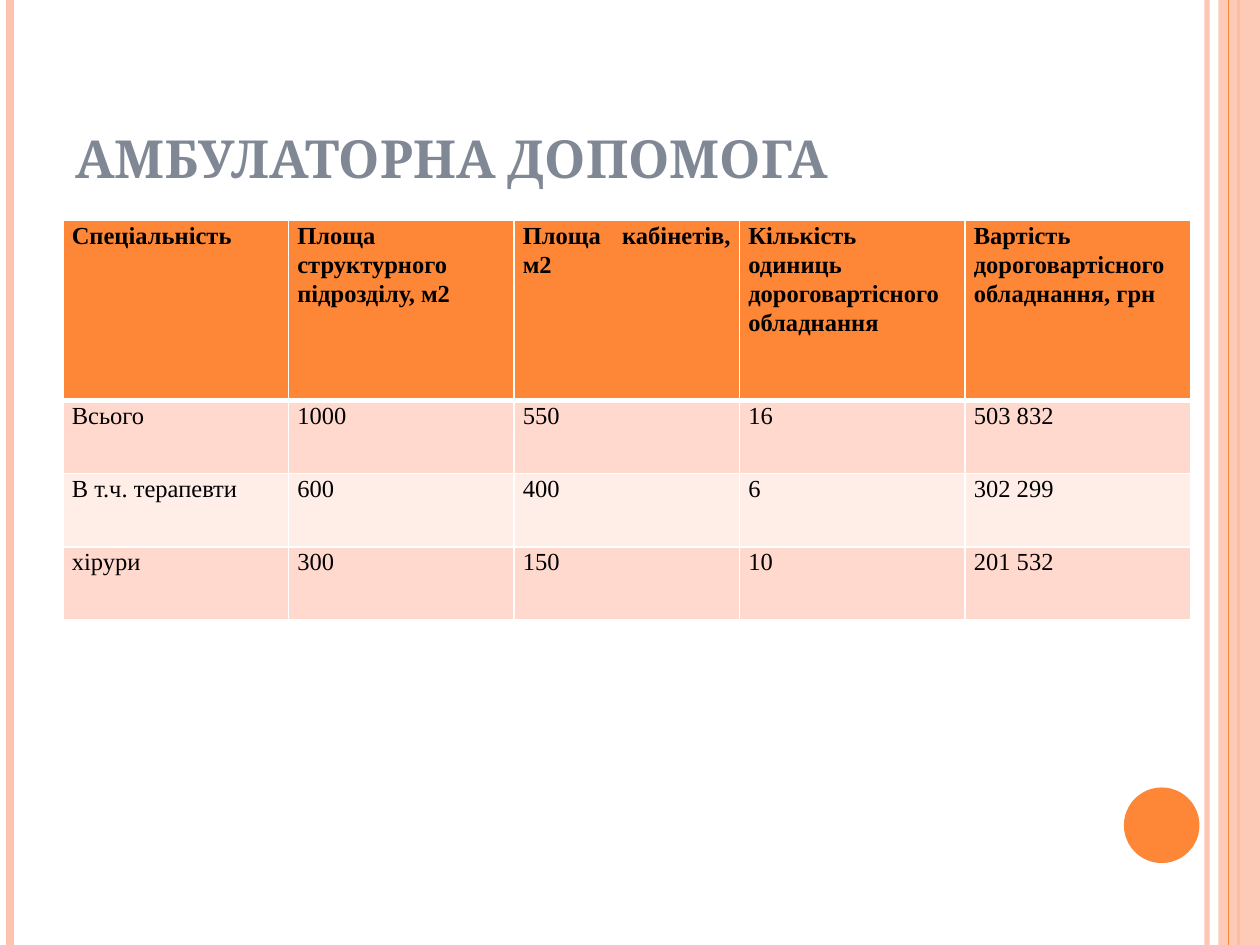
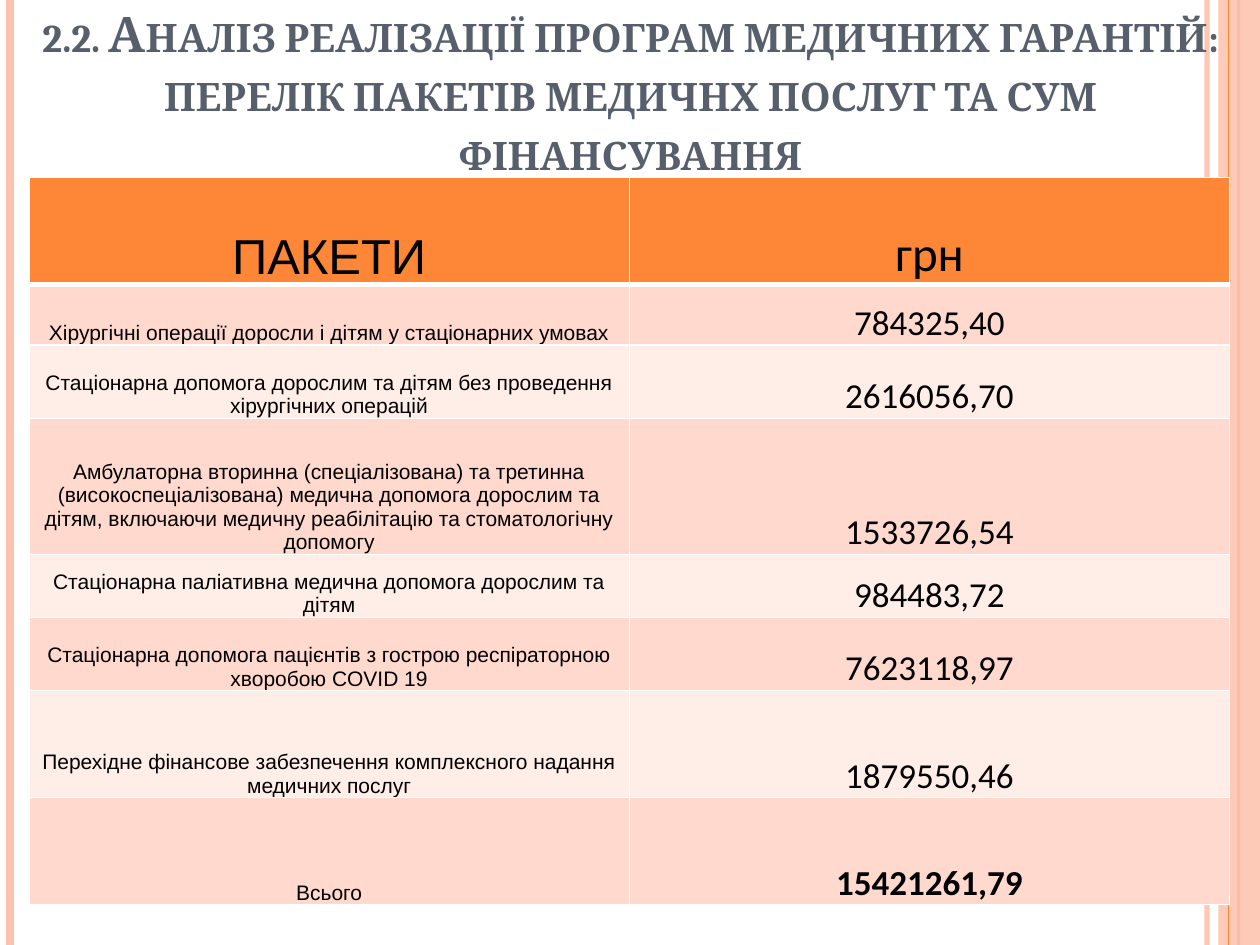
from dataclasses import dataclass

import lxml.etree
import pptx
import pptx.dml.color
import pptx.enum.shapes
import pptx.enum.text
import pptx.oxml.ns
import pptx.util

# Grid: 100 columns by 75 rows of square cells
COLS, ROWS = 100, 75
UNIT = pptx.util.Inches(0.1)

# Shared colours
ORANGE, PEACH, WHITE, BLACK = "FE8637", "FEC3AE", "FFFFFF", "000000"
BANDS = ("FFD9CE", "FFEDE8")

ALIGN = pptx.enum.text.PP_ALIGN
ANCHOR = pptx.enum.text.MSO_ANCHOR
SHAPE = pptx.enum.shapes.MSO_SHAPE
qn = pptx.oxml.ns.qn


@dataclass
class Box:
    left: float
    top: float
    width: float
    height: float

    def spans(self) -> list:
        return [grid(n) for n in (self.left, self.top, self.width, self.height)]


@dataclass
class Stripe:
    col: float
    tint: str
    weight: float
    alpha: int = 100


@dataclass
class Font:
    name: str
    size: float
    tint: str = BLACK
    bold: bool = False
    small: bool = False


@dataclass
class Look:
    align: int
    anchor: int
    sides: float
    top: float
    space: float


STRIPES = (Stripe(95.8, PEACH, 3, 93), Stripe(0.8, PEACH, 4.5), Stripe(98.3, ORANGE, 1.5))
THIN = Stripe(97.5, ORANGE, 0.75)
PANEL = Box(96.7, 0, 3.3, ROWS)
BALL = Box(89.2, 62.5, 6, 6)


def grid(cells: float) -> int:
    return round(cells * UNIT)


def rgb(tint: str) -> pptx.dml.color.RGBColor:
    return pptx.dml.color.RGBColor.from_string(tint)


def paint(fill, tint: str) -> None:
    fill.solid()
    fill.fore_color.rgb = rgb(tint)


def fade(item, alpha: int) -> None:
    """Make the first colour of a shape partly clear."""
    if alpha < 100:
        tone = next(item._element.spPr.iter(qn("a:srgbClr")))
        lxml.etree.SubElement(tone, qn("a:alpha"), val=str(alpha * 1000))


def style(part, font: Font) -> None:
    for run in part.runs:
        run.font.name = font.name
        run.font.size = pptx.util.Pt(font.size)
        run.font.bold = font.bold
        run.font.color.rgb = rgb(font.tint)
        if font.small:
            run.font._element.set("cap", "small")


# Side bands
def draw_stripe(slide, stripe: Stripe) -> None:
    x = grid(stripe.col)
    line = slide.shapes.add_connector(
        pptx.enum.shapes.MSO_CONNECTOR.STRAIGHT, x, 0, x, grid(ROWS))
    line.line.width = pptx.util.Pt(stripe.weight)
    line.line.color.rgb = rgb(stripe.tint)
    fade(line, stripe.alpha)
    lxml.etree.SubElement(line._element.spPr, qn("a:effectLst"))


def draw_shape(slide, kind, box: Box, tint: str, alpha: int = 100) -> None:
    shape = slide.shapes.add_shape(kind, *box.spans())
    shape.shadow.inherit = False
    shape.line.fill.background()
    paint(shape.fill, tint)
    fade(shape, alpha)


def draw_frame(slide) -> None:
    for stripe in STRIPES:
        draw_stripe(slide, stripe)
    draw_shape(slide, SHAPE.RECTANGLE, PANEL, PEACH, 87)
    draw_stripe(slide, THIN)


# Titles
def draw_title(slide, text: str, box: Box, font: Font, align) -> None:
    frame = slide.shapes.add_textbox(*box.spans()).text_frame
    frame.word_wrap = True
    frame.vertical_anchor = ANCHOR.BOTTOM
    frame.text = text
    part = frame.paragraphs[0]
    part.alignment = align
    style(part, font)


# Tables
def set_edge(cell, side: str, weight: float) -> None:
    edge = lxml.etree.SubElement(
        cell._tc.get_or_add_tcPr(), qn("a:ln" + side), w=str(pptx.util.Pt(weight)))
    solid = lxml.etree.SubElement(edge, qn("a:solidFill"))
    lxml.etree.SubElement(solid, qn("a:srgbClr"), val=WHITE)


def fill_cell(cell, text: str, row: int, font: Font, look: Look) -> None:
    for side in "LRTB":
        thick = (row, side) in ((0, "B"), (1, "T"))
        set_edge(cell, side, 3 if thick else 1)
    paint(cell.fill, BANDS[(row - 1) % 2] if row else ORANGE)
    cell.margin_left = cell.margin_right = grid(look.sides)
    cell.margin_top, cell.margin_bottom = grid(look.top), 0
    cell.vertical_anchor = look.anchor
    cell.text_frame.text = text
    part = cell.text_frame.paragraphs[0]
    part.alignment, part.line_spacing = look.align, look.space
    style(part, font)


def draw_table(slide, box: Box, highs: list, rows: list, look: Look, pick) -> None:
    wide = len(rows[0])
    table = slide.shapes.add_table(len(rows), wide, *box.spans()).table
    for col in table.columns:
        col.width = grid(box.width / wide)
    for r, (high, texts) in enumerate(zip(highs, rows)):
        table.rows[r].height = grid(high)
        for c, text in enumerate(texts):
            fill_cell(table.cell(r, c), text, r, pick(r, c), look)


# Slide 1: outpatient care
CARE = [
    ("Спеціальність", "Площа структурного підрозділу, м2", "Площа кабінетів, м2",
     "Кількість одиниць дороговартісного обладнання",
     "Вартість дороговартісного обладнання, грн"),
    ("Всього", "1000", "550", "16", "503 832"),
    ("В т.ч. терапевти", "600", "400", "6", "302 299"),
    ("хірури", "300", "150", "10", "201 532"),
]


def care_font(row: int, col: int) -> Font:
    return Font("Times New Roman", 14, bold=row == 0)


def build_care(slide) -> None:
    draw_frame(slide)
    draw_shape(slide, SHAPE.OVAL, BALL, ORANGE)
    draw_title(slide, "АМБУЛАТОРНА ДОПОМОГА", Box(5, 3, 81.7, 12.5),
               Font("Cambria", 30, "818895", True), ALIGN.LEFT)
    draw_table(slide, Box(5, 17.5, 89.5, 31.7), [14.3] + [5.8] * 3, CARE,
               Look(ALIGN.JUSTIFY, ANCHOR.TOP, 0.7, 0, 1.07), care_font)


# Slide 2: funding of care packages
FUNDS = [
    ("ПАКЕТИ", "грн"),
    ("Хірургічні операції доросли і дітям у стаціонарних умовах", "784325,40"),
    ("Стаціонарна допомога дорослим та дітям без проведення хірургічних операцій",
     "2616056,70"),
    ("Амбулаторна вторинна (спеціалізована) та третинна (високоспеціалізована) "
     "медична допомога дорослим та дітям, включаючи медичну реабілітацію та "
     "стоматологічну допомогу", "1533726,54"),
    ("Стаціонарна паліативна медична допомога дорослим та дітям", "984483,72"),
    ("Стаціонарна допомога пацієнтів з гострою респіраторною хворобою COVID 19",
     "7623118,97"),
    ("Перехідне фінансове забезпечення комплексного надання медичних послуг",
     "1879550,46"),
    ("Всього", "15421261,79"),
]


def fund_font(row: int, col: int) -> Font:
    name = ("Arial", "Calibri")[col]
    size = (12, 20)[col] if row else 28
    return Font(name, size, bold=col == 1 and row == len(FUNDS) - 1)


def build_funds(slide) -> None:
    draw_frame(slide)
    draw_title(slide, "2.2. Аналіз реалізації програм медичних гарантій: "
               "перелік пакетів медичнх послуг та сум фінансування",
               Box(1.6, 2.3, 96.9, 12.5),
               Font("Cambria", 28, "575F6D", True, True), ALIGN.CENTER)
    draw_table(slide, Box(2.3, 14.1, 95.3, 57.8),
               [8.5, 4.8, 5.8, 10.8, 5, 5.8, 8.5, 8.5], FUNDS,
               Look(ALIGN.CENTER, ANCHOR.BOTTOM, 0.1, 0.1, 1.0), fund_font)


def main() -> None:
    deck = pptx.Presentation()
    deck.slide_width, deck.slide_height = grid(COLS), grid(ROWS)
    for build in (build_care, build_funds):
        build(deck.slides.add_slide(deck.slide_layouts[6]))
    deck.save("out.pptx")


if __name__ == "__main__":
    main()
